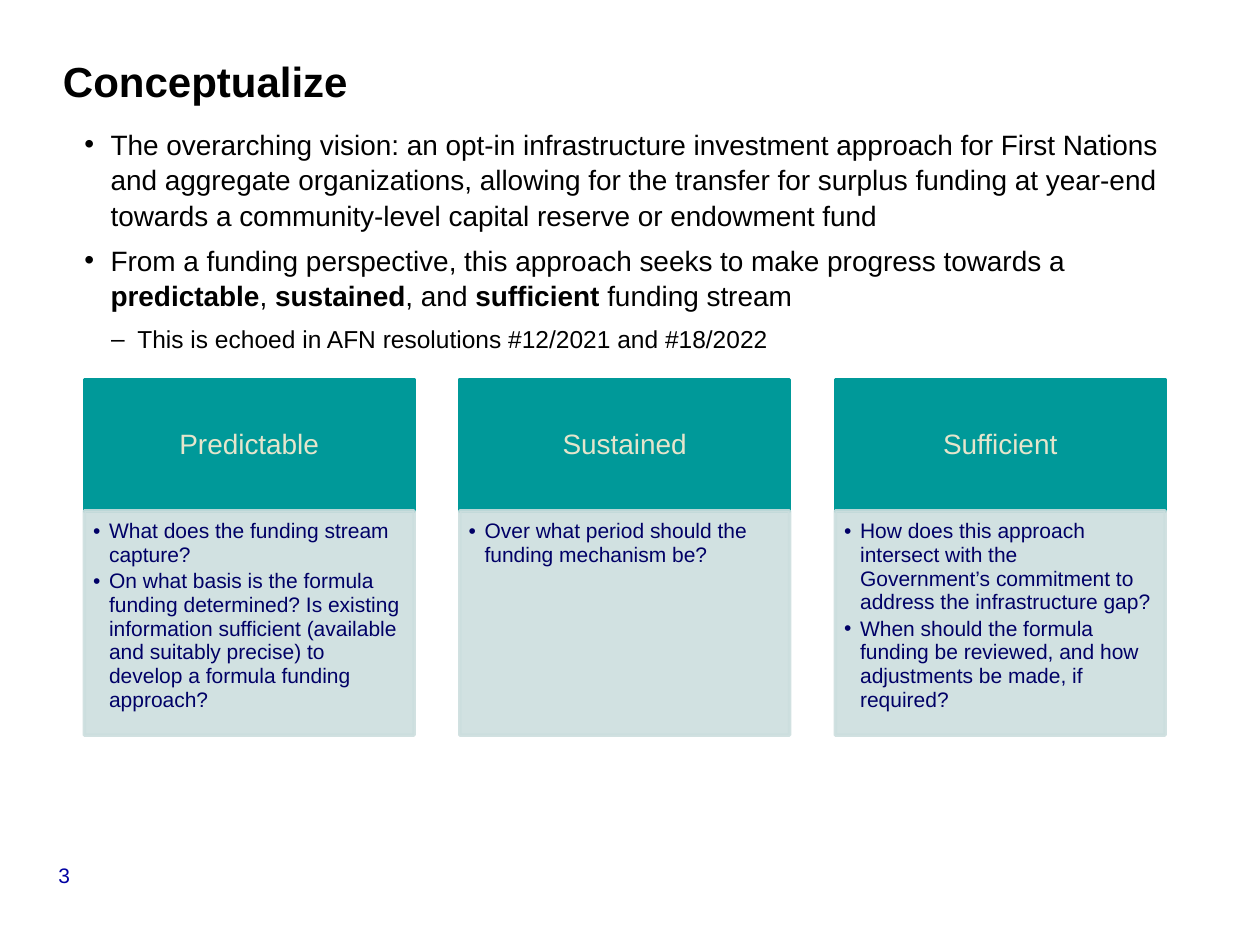
"""Build the Conceptualize slide with its vision bullets and three funding cards."""
import pptx
import pptx.dml.color
import pptx.enum.shapes
import pptx.enum.text
import pptx.oxml.ns
import pptx.util
import lxml.etree

Cm = pptx.util.Cm
Pt = pptx.util.Pt
ALIGN = pptx.enum.text.PP_ALIGN
ANCHOR = pptx.enum.text.MSO_ANCHOR
THEME = {
    "font": "Arial", "text": "000000", "number": "0000A3",
    "header_fill": "009999", "header_text": "E5E5CC",
    "card_fill": "CCDEDE", "card_text": "000066",
    "title_size": 24, "body_size": 16, "sub_size": 14, "card_size": 12,
}


def set_frame(shape, insets=(0, 0, 0, 0), anchor=ANCHOR.TOP):
    frame = shape.text_frame
    frame.word_wrap = True
    frame.vertical_anchor = anchor
    frame.margin_left, frame.margin_top, frame.margin_right, frame.margin_bottom = map(Cm, insets)
    return frame


def add_text(frame, text, size, color, bold=False, align=ALIGN.LEFT, spacing=1.0,
             after=0, bullet=None, indent=0, hanging=0):
    paragraph = frame.paragraphs[0]
    if paragraph.runs:
        paragraph = frame.add_paragraph()
    paragraph.alignment = align
    paragraph.line_spacing = spacing
    paragraph.space_after = Pt(after)
    for index, part in enumerate(text.split("*")):
        run = paragraph.add_run()
        run.text = part
        run.font.name = THEME["font"]
        run.font.size = Pt(size)
        run.font.bold = bold or index % 2 == 1
        run.font.color.rgb = pptx.dml.color.RGBColor.from_string(color)
    if bullet:
        properties = paragraph._p.get_or_add_pPr()
        properties.set("marL", str(Cm(indent)))
        properties.set("indent", str(-Cm(hanging)))
        for tag, key, value in (("a:buFont", "typeface", THEME["font"]), ("a:buChar", "char", bullet)):
            lxml.etree.SubElement(properties, pptx.oxml.ns.qn(tag)).set(key, value)


presentation = pptx.Presentation()
presentation.slide_width = Cm(25.4)
presentation.slide_height = Cm(19.05)
slide = presentation.slides.add_slide(presentation.slide_layouts[6])

title = slide.shapes.add_textbox(Cm(1.27), Cm(1.07), Cm(21.8), Cm(1.07))
add_text(set_frame(title, anchor=ANCHOR.BOTTOM), "Conceptualize", THEME["title_size"], THEME["text"], bold=True)

body = slide.shapes.add_textbox(Cm(1.7), Cm(2.54), Cm(21.8), Cm(4.9))
body_frame = set_frame(body)
body_bullets = [
    ("The overarching vision: an opt-in infrastructure investment approach for First Nations and "
     "aggregate organizations, allowing for the transfer for surplus funding at year-end towards a "
     "community-level capital reserve or endowment fund", THEME["body_size"], "•", 0.53),
    ("From a funding perspective, this approach seeks to make progress towards a "
     "*predictable*, *sustained*, and *sufficient* funding stream", THEME["body_size"], "•", 0.53),
    ("This is echoed in AFN resolutions #12/2021 and #18/2022", THEME["sub_size"], "–", 1.07),
]
for text, size, bullet, indent in body_bullets:
    add_text(body_frame, text, size, THEME["text"], spacing=1.05, after=round(size * 0.36, 1),
             bullet=bullet, indent=indent, hanging=0.53)

cards = [
    ("Predictable", [
        "What does the funding stream capture?",
        "On what basis is the formula funding determined? Is existing information sufficient "
        "(available and suitably precise) to develop a formula funding approach?"]),
    ("Sustained", ["Over what period should the funding mechanism be?"]),
    ("Sufficient", [
        "How does this approach intersect with the Government’s commitment to address the "
        "infrastructure gap?",
        "When should the formula funding be reviewed, and how adjustments be made, if required?"]),
]
card_left, card_top, card_width, card_pitch = 1.7, 7.65, 6.65, 7.57
header_height, detail_height = 2.65, 4.52
for column, (heading, questions) in enumerate(cards):
    left = Cm(card_left + column * card_pitch)
    boxes = []
    for top, height, color, opacity in (
            (card_top, header_height, THEME["header_fill"], 100),
            (card_top + header_height, detail_height, THEME["card_fill"], 90)):
        box = slide.shapes.add_shape(pptx.enum.shapes.MSO_SHAPE.RECTANGLE,
                                     left, Cm(top), Cm(card_width), Cm(height))
        box.shadow.inherit = False
        box.line.width = Pt(2)
        box.fill.solid()
        for paint in (box.fill, box.line.fill):
            paint.solid()
            paint.fore_color.rgb = pptx.dml.color.RGBColor.from_string(color)
        if opacity < 100:
            for color_node in box._element.spPr.iter(pptx.oxml.ns.qn("a:srgbClr")):
                alpha = lxml.etree.SubElement(color_node, pptx.oxml.ns.qn("a:alpha"))
                alpha.set("val", str(opacity * 1000))
        boxes.append(box)
    header, detail = boxes
    add_text(set_frame(header, (0.3, 0.18, 0.3, 0.18), ANCHOR.MIDDLE), heading, THEME["body_size"],
             THEME["header_text"], align=ALIGN.CENTER, spacing=0.9)
    detail_frame = set_frame(detail, (0.18, 0.18, 0.23, 0.25))
    for question in questions:
        add_text(detail_frame, question, THEME["card_size"], THEME["card_text"], spacing=0.94,
                 after=1.5, bullet="•", indent=0.32, hanging=0.32)

number = slide.shapes.add_textbox(Cm(0.1), Cm(17.32), Cm(2.39), Cm(0.76))
add_text(set_frame(number, (0.25, 0.13, 0.25, 0.13)), "3", THEME["card_size"], THEME["number"],
         align=ALIGN.CENTER, spacing=0.9)

presentation.save("out.pptx")
